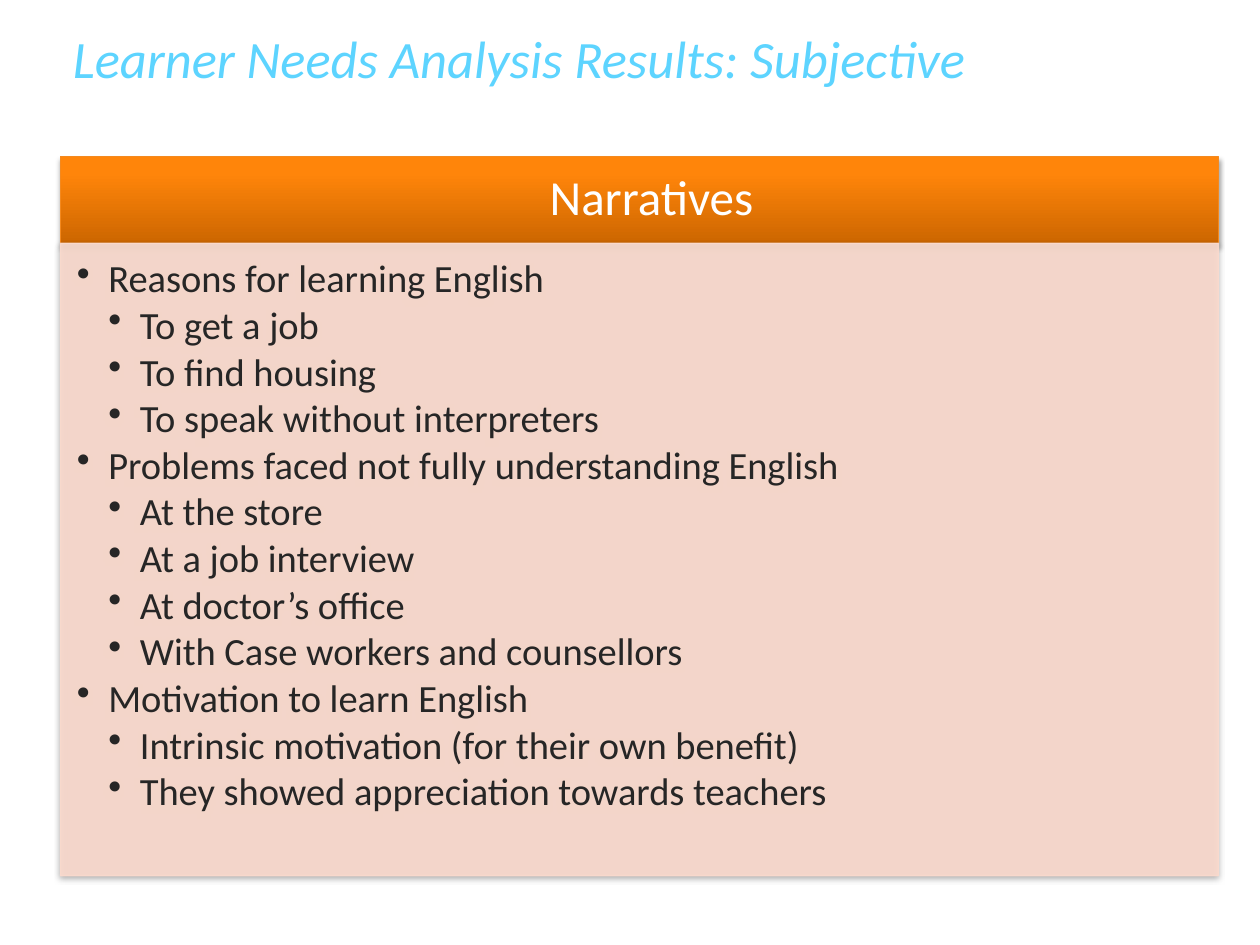
from copy import deepcopy
from pptx import Presentation
from pptx.dml.color import RGBColor as RGB
from pptx.enum.shapes import MSO_SHAPE as Shape
from pptx.enum.text import MSO_ANCHOR as Anchor, PP_ALIGN as Align
from pptx.oxml.ns import qn
from pptx.util import Pt
from lxml.etree import SubElement

COLORS = {
    "title": "5DD4FF",
    "header_text": "FFFFFF",
    "header_line": "F4891E",
    "body_fill": "FBDACD",
    "body_text": "262626",
    "shadow": "000000",
}
HEADER_STOPS = [(0, "CC6600"), (0.8, "FF850A"), (1, "FF850C")]
NARRATIVES = [
    ("Reasons for learning English",
     ["To get a job", "To find housing", "To speak without interpreters"]),
    ("Problems faced not fully understanding English",
     ["At the store", "At a job interview", "At doctor’s office",
      "With Case workers and counsellors"]),
    ("Motivation to learn English",
     ["Intrinsic motivation (for their own benefit)",
      "They showed appreciation towards teachers"]),
]
LEFT, WIDTH = 34.56, 661.68
HEADER_TOP, HEADER_HEIGHT, BODY_HEIGHT = 89.28, 49.68, 361.44


def set_font(paragraph, size, color, italic=None):
    font = paragraph.font
    font.name = "Calibri"
    font.size = Pt(size)
    font.italic = italic
    font.color.rgb = RGB.from_string(COLORS[color])


def add_panel(top, height, line_color, insets):
    panel = slide.shapes.add_shape(
        Shape.RECTANGLE, Pt(LEFT), Pt(top), Pt(WIDTH), Pt(height))
    panel.line.color.rgb = RGB.from_string(COLORS[line_color])
    panel.line.width = Pt(0.75)
    panel.shadow.inherit = False
    effects = panel._element.spPr.find(qn("a:effectLst"))
    shadow = SubElement(effects, qn("a:outerShdw"), blurRad=str(Pt(3.1)),
                        dist=str(Pt(1.8)), dir="5400000", rotWithShape="0")
    shade = SubElement(shadow, qn("a:srgbClr"), val=COLORS["shadow"])
    SubElement(shade, qn("a:alpha"), val="35000")
    frame = panel.text_frame
    frame.word_wrap = True
    frame.margin_left, frame.margin_top, frame.margin_right, frame.margin_bottom = map(Pt, insets)
    return panel


presentation = Presentation()
presentation.slide_width, presentation.slide_height = Pt(720), Pt(540)
slide = presentation.slides.add_slide(presentation.slide_layouts[6])

title = slide.shapes.add_textbox(Pt(LEFT), Pt(5.76), Pt(WIDTH), Pt(54)).text_frame
title.word_wrap = True
title.vertical_anchor = Anchor.MIDDLE
title.text = "Learner Needs Analysis Results: Subjective"
set_font(title.paragraphs[0], 30, "title", italic=True)

header = add_panel(HEADER_TOP, HEADER_HEIGHT, "header_line", (15.84, 8.64, 15.84, 8.64))
header.fill.gradient()
header.fill.gradient_angle = 90
stop_list = header._element.spPr.find(qn("a:gradFill")).find(qn("a:gsLst"))
stop_list.append(deepcopy(stop_list[-1]))
for stop, (position, color) in zip(header.fill.gradient_stops, HEADER_STOPS):
    stop.position = position
    stop.color.rgb = RGB.from_string(color)
header.text_frame.vertical_anchor = Anchor.MIDDLE
heading = header.text_frame.paragraphs[0]
heading.text = "Narratives"
heading.alignment = Align.CENTER
heading.line_spacing = 0.9
heading._p.get_or_add_pPr().set("marL", str(Pt(13.68)))
set_font(heading, 28, "header_text")

body = add_panel(HEADER_TOP + HEADER_HEIGHT, BODY_HEIGHT, "body_fill",
                 (9.36, 9.36, 12.24, 13.68))
body.fill.solid()
body.fill.fore_color.rgb = RGB.from_string(COLORS["body_fill"])
for color in list(body._element.spPr.iter(qn("a:srgbClr"))):
    if color.get("val") == COLORS["body_fill"]:
        SubElement(color, qn("a:alpha"), val="90000")
body.text_frame.vertical_anchor = Anchor.TOP

lines = [(level, text) for topic, points in NARRATIVES
         for level, text in [(1, topic)] + [(2, point) for point in points]]
for index, (level, text) in enumerate(lines):
    bullet = body.text_frame.add_paragraph() if index else body.text_frame.paragraphs[0]
    bullet.text = text
    bullet.level = level
    bullet.alignment = Align.LEFT
    bullet.line_spacing = 0.9
    bullet.space_after = Pt(2.9)
    properties = bullet._p.get_or_add_pPr()
    properties.set("marL", str(Pt(18 * level)))
    properties.set("indent", str(Pt(-18)))
    SubElement(properties, qn("a:buChar"), char="•")
    set_font(bullet, 22, "body_text")

presentation.save("out.pptx")
